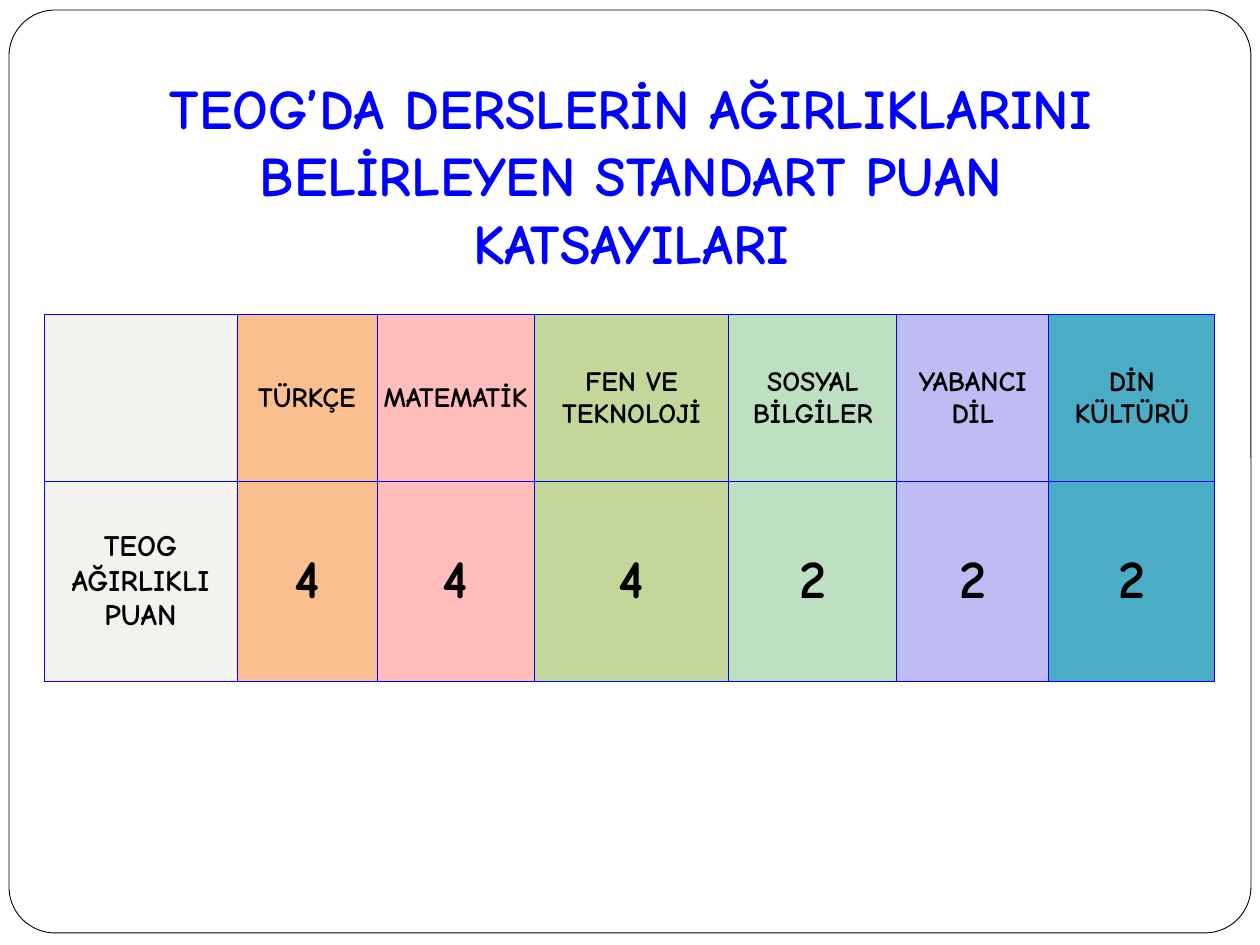
from dataclasses import dataclass

from lxml.etree import SubElement
from pptx import Presentation
from pptx.dml.color import RGBColor
from pptx.enum.shapes import MSO_SHAPE
from pptx.enum.text import MSO_ANCHOR, PP_ALIGN
from pptx.oxml.ns import qn
from pptx.slide import Slide
from pptx.table import _Cell
from pptx.text.text import TextFrame
from pptx.util import Emu, Pt

SCALE = 914400 // 126


@dataclass(frozen=True)
class Theme:
    font: str = "Comic Neue"
    blue: str = "0000FF"
    black: str = "000000"
    white: str = "FFFFFF"
    title: int = 32
    head: int = 16
    label: int = 17
    score: int = 31
    line: float = 0.5


@dataclass(frozen=True)
class Box:
    left: int
    top: int
    width: int
    height: int

    def emu(self) -> tuple[Emu, Emu, Emu, Emu]:
        return px(self.left), px(self.top), px(self.width), px(self.height)


@dataclass(frozen=True)
class Column:
    width: int
    fill: str
    head: str
    value: str
    size: int


THEME = Theme()
FRAME = Box(9, 10, 1242, 923)
TITLE = Box(105, 66, 1052, 217)
GRID = Box(44, 314, 1171, 367)
ROWS = (167, 200)
COLUMNS = (
    Column(193, "F4F2EE", "", "TEOG AĞIRLIKLI PUAN", THEME.label),
    Column(140, "FABF8F", "TÜRKÇE", "4", THEME.score),
    Column(157, "FFBEBC", "MATEMATİK", "4", THEME.score),
    Column(195, "C4D79B", "FEN VE TEKNOLOJİ", "4", THEME.score),
    Column(168, "BDDFC2", "SOSYAL BİLGİLER", "2", THEME.score),
    Column(152, "BEBCF3", "YABANCI DİL", "2", THEME.score),
    Column(166, "4BACC6", "DİN KÜLTÜRÜ", "2", THEME.score),
)


def px(count: int) -> Emu:
    return Emu(count * SCALE)


def rgb(code: str) -> RGBColor:
    return RGBColor.from_string(code)


def write(frame: TextFrame, text: str, size: int, color: str) -> None:
    frame.text = text
    frame.word_wrap = True
    para = frame.paragraphs[0]
    para.alignment = PP_ALIGN.CENTER
    for run in para.runs:
        run.font.name = THEME.font
        run.font.size = Pt(size)
        run.font.bold = True
        run.font.color.rgb = rgb(color)


def draw_frame(slide: Slide) -> None:
    frame = slide.shapes.add_shape(MSO_SHAPE.ROUNDED_RECTANGLE, *FRAME.emu())
    frame.adjustments[0] = 0.05
    frame.shadow.inherit = False
    frame.fill.solid()
    frame.fill.fore_color.rgb = rgb(THEME.white)
    frame.line.color.rgb = rgb(THEME.black)
    frame.line.width = Pt(THEME.line)
    slide.shapes._spTree.insert(2, frame._element)


def draw_title(slide: Slide) -> None:
    title = slide.shapes.title
    title.left, title.top, title.width, title.height = TITLE.emu()
    text = "TEOG’DA DERSLERİN AĞIRLIKLARINI BELİRLEYEN STANDART PUAN KATSAYILARI"
    write(title.text_frame, text, THEME.title, THEME.blue)


def add_edges(cell: _Cell) -> None:
    props = cell._tc.get_or_add_tcPr()
    for place, side in enumerate(("lnL", "lnR", "lnT", "lnB")):
        line = SubElement(props, qn(f"a:{side}"), w=str(Pt(THEME.line)))
        fill = SubElement(line, qn("a:solidFill"))
        SubElement(fill, qn("a:srgbClr"), val=THEME.blue)
        props.insert(place, line)


def fill_cell(cell: _Cell, text: str, size: int, fill: str) -> None:
    cell.fill.solid()
    cell.fill.fore_color.rgb = rgb(fill)
    cell.margin_left = cell.margin_right = cell.margin_top = px(1)
    cell.margin_bottom = px(0)
    cell.vertical_anchor = MSO_ANCHOR.MIDDLE
    write(cell.text_frame, text, size, THEME.black)
    cell.text_frame.paragraphs[0].space_before = Pt(size * 0.2)
    add_edges(cell)


def draw_grid(slide: Slide) -> None:
    table = slide.shapes.add_table(len(ROWS), len(COLUMNS), *GRID.emu()).table
    for row, height in zip(table.rows, ROWS):
        row.height = px(height)
    for index, column in enumerate(COLUMNS):
        table.columns[index].width = px(column.width)
        fill_cell(table.cell(0, index), column.head, THEME.head, column.fill)
        fill_cell(table.cell(1, index), column.value, column.size, column.fill)


def main() -> None:
    deck = Presentation()
    deck.slide_width, deck.slide_height = px(1260), px(945)
    slide = deck.slides.add_slide(deck.slide_layouts[5])
    draw_frame(slide)
    draw_title(slide)
    draw_grid(slide)
    deck.save("out.pptx")


if __name__ == "__main__":
    main()
